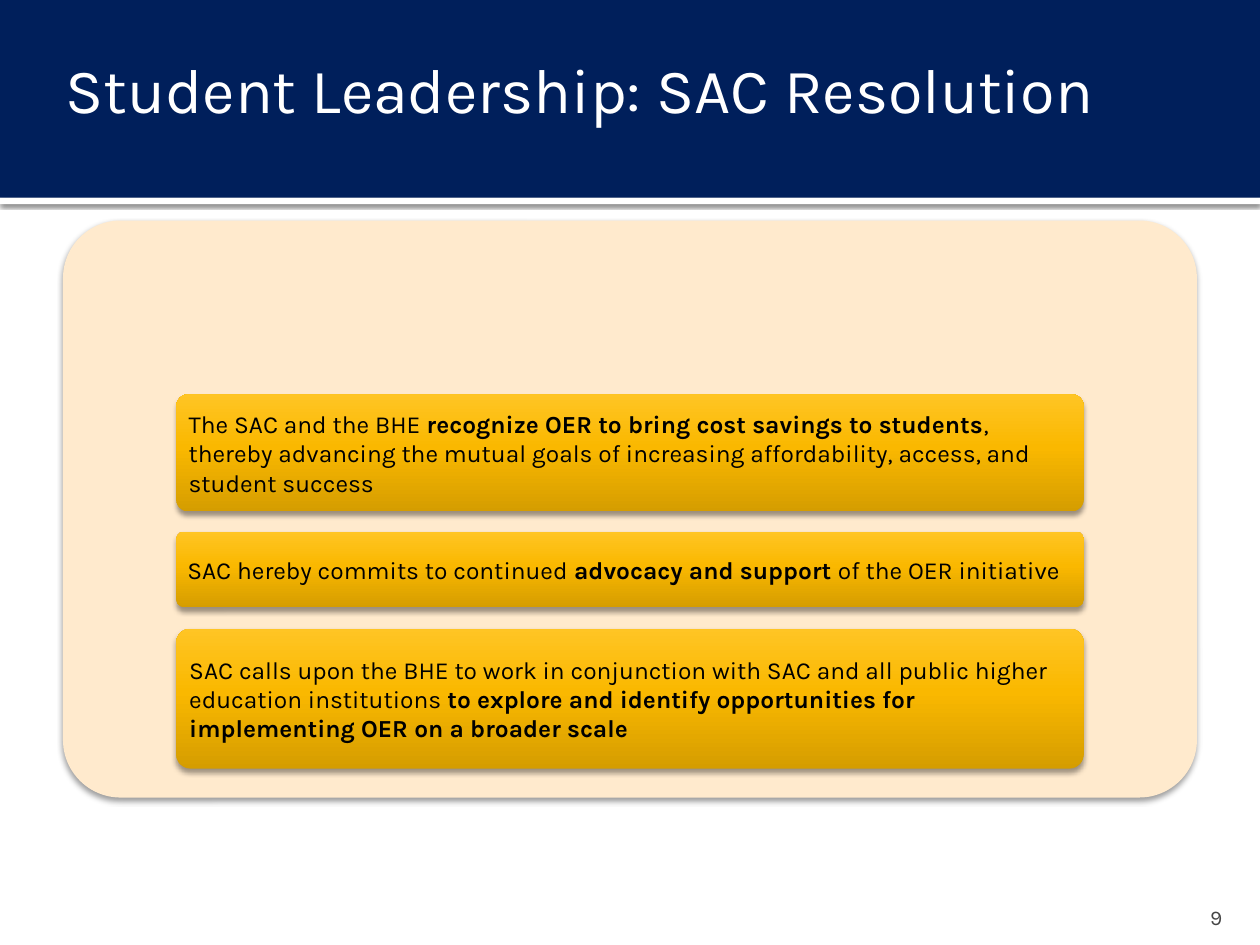
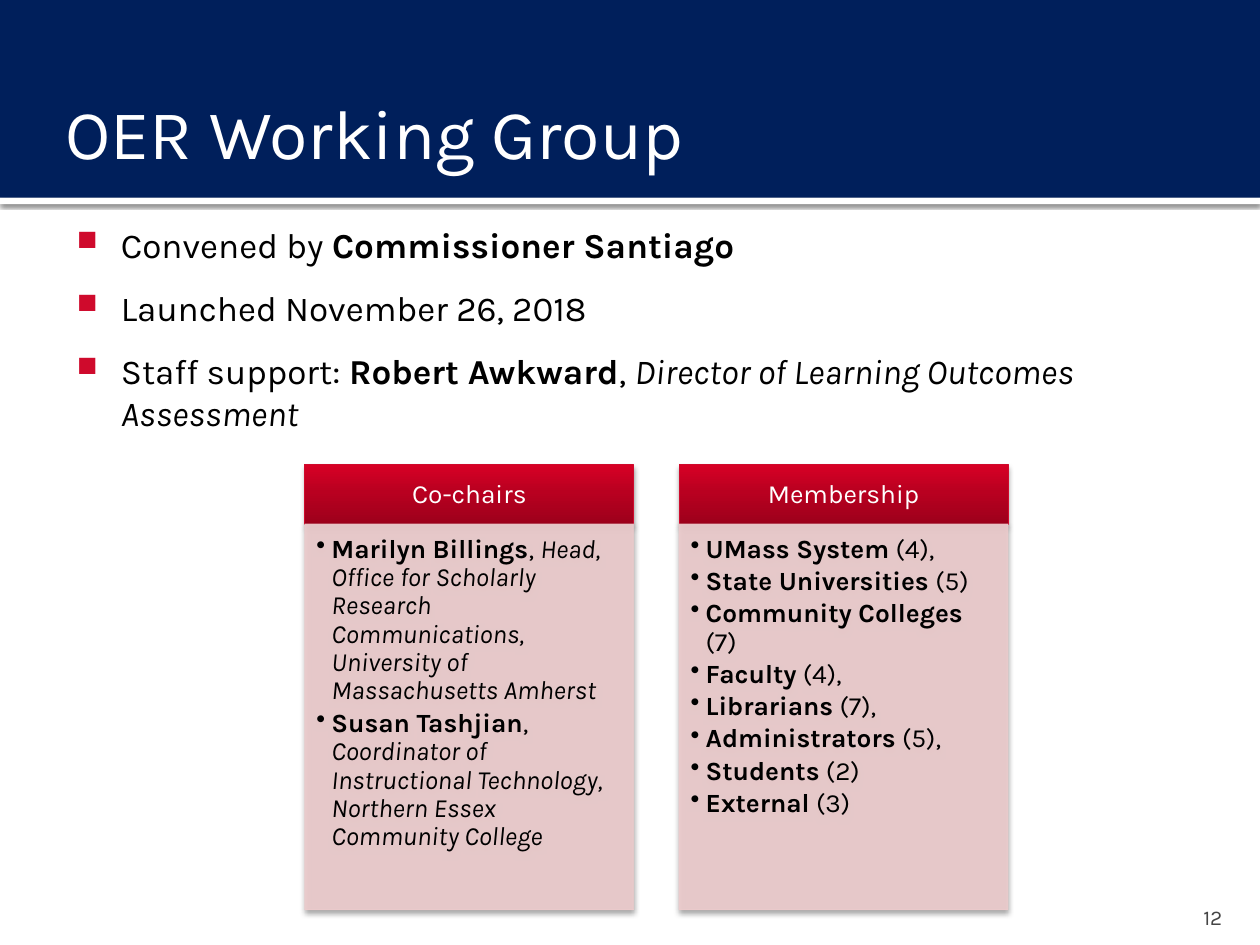
from dataclasses import dataclass
from typing import NamedTuple, Optional

from lxml.etree import SubElement
from pptx import Presentation
from pptx.dml.color import RGBColor
from pptx.enum.shapes import MSO_SHAPE as Preset
from pptx.enum.text import MSO_ANCHOR as Anchor, MSO_AUTO_SIZE as AutoSize, PP_ALIGN as Align
from pptx.oxml.ns import qn
from pptx.util import Inches, Pt

# Shared look
FONT = "Karla"
WHITE = RGBColor(0xFF, 0xFF, 0xFF)
BLACK = RGBColor(0, 0, 0)
GREY = RGBColor(0x45, 0x45, 0x45)
NAVY = RGBColor(0x00, 0x1F, 0x5B)
RED = RGBColor(0xCF, 0x0A, 0x2C)
PINK = RGBColor(0xED, 0xCC, 0xCD)
CREAM = RGBColor(0xFF, 0xEA, 0xCD)
GOLD_STOPS = (RGBColor(0xD5, 0x9D, 0x00), RGBColor(0xFA, 0xB8, 0x00), RGBColor(0xFF, 0xC5, 0x24))
RED_STOPS = (RGBColor(0x9D, 0x00, 0x1B), RGBColor(0xB9, 0x00, 0x20), RGBColor(0xD7, 0x00, 0x25))
STOP_PLACES = (0, 55, 100)


class Box(NamedTuple):
    left: float
    top: float
    width: float
    height: float

    def lengths(self):
        return [Inches(value) for value in self]


class Span(NamedTuple):
    text: str
    bold: bool = False
    italic: bool = False


class Shadow(NamedTuple):
    opacity: int
    blur: float
    distance: float


class Bullet(NamedTuple):
    char: str
    left: float
    hanging: float
    color: Optional[RGBColor] = None
    percent: int = 100


@dataclass(frozen=True)
class TextStyle:
    size: float
    color: RGBColor = BLACK
    align: Align = Align.LEFT
    anchor: Anchor = Anchor.MIDDLE
    insets: tuple = (0.1, 0.05, 0.1, 0.05)
    line_spacing: Optional[float] = None
    before: float = 0
    after: float = 0
    bullet: Optional[Bullet] = None


@dataclass(frozen=True)
class Clause:
    top: float
    height: float
    spans: tuple


@dataclass(frozen=True)
class Column:
    heading: str
    items: tuple


BAND_SHADOW = Shadow(60, 2.5, 0.8)
CARD_SHADOW = Shadow(38, 3.1, 2)

NUMBER_STYLE = TextStyle(12, GREY, Align.RIGHT, Anchor.BOTTOM, (0.1, 0.05, 0.1, 0))
CLAUSE_STYLE = TextStyle(14, insets=(0.07, 0.05, 0.06, 0.05))
BODY_STYLE = TextStyle(20, anchor=Anchor.TOP, insets=(0.06, 0.1, 0.1, 0.05), before=12,
                       bullet=Bullet("■", 0.48, 0.35, RED, 80))
HEADING_STYLE = TextStyle(15, WHITE, Align.CENTER, insets=(0.12, 0.07, 0.12, 0.07),
                          line_spacing=0.9)
ITEM_STYLE = TextStyle(15, anchor=Anchor.TOP, insets=(0.09, 0.09, 0.12, 0.13),
                       line_spacing=0.9, after=2.25, bullet=Bullet("•", 0.12, 0.12))

# Words of the resolution slide
CLAUSES = (
    Clause(3.13, 0.93, (
        Span("The SAC and the BHE "),
        Span("recognize OER to bring cost savings to students", bold=True),
        Span(", thereby advancing the mutual goals of increasing affordability, "
             "access, and student success"))),
    Clause(4.22, 0.6, (
        Span("SAC hereby commits to continued "),
        Span("advocacy and support ", bold=True),
        Span("of the OER initiative"))),
    Clause(4.99, 1.11, (
        Span("SAC calls upon the BHE to work in conjunction with SAC and all public "
             "higher education institutions "),
        Span("to explore and identify opportunities for implementing OER on a "
             "broader scale", bold=True))),
)

# Words of the working group slide
FACTS = (
    (Span("Convened by "), Span("Commissioner Santiago", bold=True)),
    (Span("Launched November 26, 2018"),),
    (Span("Staff support: "), Span("Robert Awkward", bold=True), Span(", "),
     Span("Director of Learning Outcomes Assessment", italic=True)),
)
CHAIRS = (
    ("Marilyn Billings", "Head, Office for Scholarly Research Communications, "
                         "University of Massachusetts Amherst"),
    ("Susan Tashjian", "Coordinator of Instructional Technology, "
                       "Northern Essex Community College"),
)
MEMBERS = (
    ("UMass System", "(4),"), ("State Universities", "(5)"), ("Community Colleges", "(7)"),
    ("Faculty", "(4),"), ("Librarians", "(7),"), ("Administrators", "(5),"),
    ("Students", "(2)"), ("External", "(3)"),
)
COLUMNS = (
    Column("Co-chairs", tuple(
        (Span(name, bold=True), Span(", "), Span(role, italic=True)) for name, role in CHAIRS)),
    Column("Membership", tuple(
        (Span(group, bold=True), Span(f" {count}")) for group, count in MEMBERS)),
)


# Drawing helpers
def add_bullet(para, bullet: Bullet) -> None:
    props = para._p.get_or_add_pPr()
    props.set("marL", str(Inches(bullet.left)))
    props.set("indent", str(-Inches(bullet.hanging)))
    if bullet.color is not None:
        SubElement(SubElement(props, qn("a:buClr")), qn("a:srgbClr"), val=str(bullet.color))
    SubElement(props, qn("a:buSzPct"), val=str(bullet.percent * 1000))
    SubElement(props, qn("a:buChar"), char=bullet.char)


def write_text(frame, paragraphs, style: TextStyle) -> None:
    frame.word_wrap = True
    frame.auto_size = AutoSize.NONE
    frame.vertical_anchor = style.anchor
    (frame.margin_left, frame.margin_top,
     frame.margin_right, frame.margin_bottom) = [Inches(value) for value in style.insets]
    for index, spans in enumerate(paragraphs):
        para = frame.add_paragraph() if index else frame.paragraphs[0]
        para.alignment = style.align
        para.line_spacing = style.line_spacing
        para.space_before, para.space_after = Pt(style.before), Pt(style.after)
        if style.bullet:
            add_bullet(para, style.bullet)
        for span in spans:
            run = para.add_run()
            run.text = span.text
            font = run.font
            font.name, font.size = FONT, Pt(style.size)
            font.bold, font.italic = span.bold, span.italic
            font.color.rgb = style.color


def add_text(page, box: Box, paragraphs, style: TextStyle) -> None:
    write_text(page.shapes.add_textbox(*box.lengths()).text_frame, paragraphs, style)


def add_shadow(shape, shadow: Shadow) -> None:
    effects = shape._element.spPr.find(qn("a:effectLst"))
    outer = SubElement(effects, qn("a:outerShdw"), blurRad=str(Pt(shadow.blur)),
                       dist=str(Pt(shadow.distance)), dir="5400000", rotWithShape="0")
    color = SubElement(outer, qn("a:srgbClr"), val=str(BLACK))
    SubElement(color, qn("a:alpha"), val=str(shadow.opacity * 1000))


def fill_gradient(shape, stops) -> None:
    shape.fill.gradient()
    shape.fill.gradient_angle = 90
    stop_list = shape._element.spPr.find(".//" + qn("a:gsLst"))
    for stop in list(stop_list):
        stop_list.remove(stop)
    for place, color in zip(STOP_PLACES, stops):
        stop = SubElement(stop_list, qn("a:gs"), pos=str(place * 1000))
        SubElement(stop, qn("a:srgbClr"), val=str(color))


def add_block(page, box: Box, fill, shadow: Optional[Shadow] = None,
              line: Optional[RGBColor] = None, preset: Preset = Preset.RECTANGLE,
              opacity: int = 100):
    shape = page.shapes.add_shape(preset, *box.lengths())
    shape.shadow.inherit = False
    if preset == Preset.ROUNDED_RECTANGLE:
        shape.adjustments[0] = 0.1
    if isinstance(fill, RGBColor):
        shape.fill.solid()
        shape.fill.fore_color.rgb = fill
    else:
        fill_gradient(shape, fill)
    if line is None:
        shape.line.fill.background()
    else:
        shape.line.color.rgb = line
        shape.line.width = Pt(0.5)
    if opacity < 100:
        for color in shape._element.spPr.iter(qn("a:srgbClr")):
            SubElement(color, qn("a:alpha"), val=str(opacity * 1000))
    if shadow:
        add_shadow(shape, shadow)
    return shape


def add_page(deck, title: str, number: int, title_size: float, title_top: float):
    """Start a slide with the navy band, its title and the slide number."""
    page = deck.slides.add_slide(deck.slide_layouts[5])
    add_block(page, Box(0, 1.57, 10, 0.05), WHITE, BAND_SHADOW)
    add_block(page, Box(0, 0, 10, 1.57), NAVY)
    add_text(page, Box(9, 7.08, 0.8, 0.3), [[Span(str(number))]], NUMBER_STYLE)
    heading = page.shapes.title
    heading.left, heading.top, heading.width, heading.height = Box(
        0.42, title_top, 9.17, 0.92).lengths()
    write_text(heading.text_frame, [[Span(title)]],
               TextStyle(title_size, WHITE, insets=(0.1, 0.05, 0.05, 0.05)))
    page.shapes._spTree.append(heading._element)  # bring in front of the band
    return page


# Slides
def build_resolution(deck) -> None:
    page = add_page(deck, "Student Leadership: SAC Resolution", 9, 36, 0.24)
    add_block(page, Box(0.5, 1.75, 9, 4.58), CREAM, CARD_SHADOW,
              preset=Preset.ROUNDED_RECTANGLE)
    for clause in CLAUSES:
        card = add_block(page, Box(1.4, clause.top, 7.2, clause.height), GOLD_STOPS,
                         CARD_SHADOW, preset=Preset.ROUNDED_RECTANGLE)
        write_text(card.text_frame, [clause.spans], CLAUSE_STYLE)


def build_working_group(deck) -> None:
    page = add_page(deck, "OER Working Group", 12, 40, 0.58)
    add_text(page, Box(0.42, 1.67, 9.17, 5.5), FACTS, BODY_STYLE)
    left, top, width, gap, head_height = 2.42, 3.69, 2.61, 0.36, 0.47
    for index, column in enumerate(COLUMNS):
        x = left + index * (width + gap)
        head = add_block(page, Box(x, top, width, head_height), RED_STOPS, CARD_SHADOW, RED)
        write_text(head.text_frame, [[Span(column.heading)]], HEADING_STYLE)
        panel = add_block(page, Box(x, top + head_height, width, 3.06), PINK, CARD_SHADOW,
                          PINK, opacity=90)
        write_text(panel.text_frame, column.items, ITEM_STYLE)


def main() -> None:
    deck = Presentation()
    deck.slide_width, deck.slide_height = Inches(10), Inches(7.5)
    build_resolution(deck)
    build_working_group(deck)
    deck.save("out.pptx")


if __name__ == "__main__":
    main()
